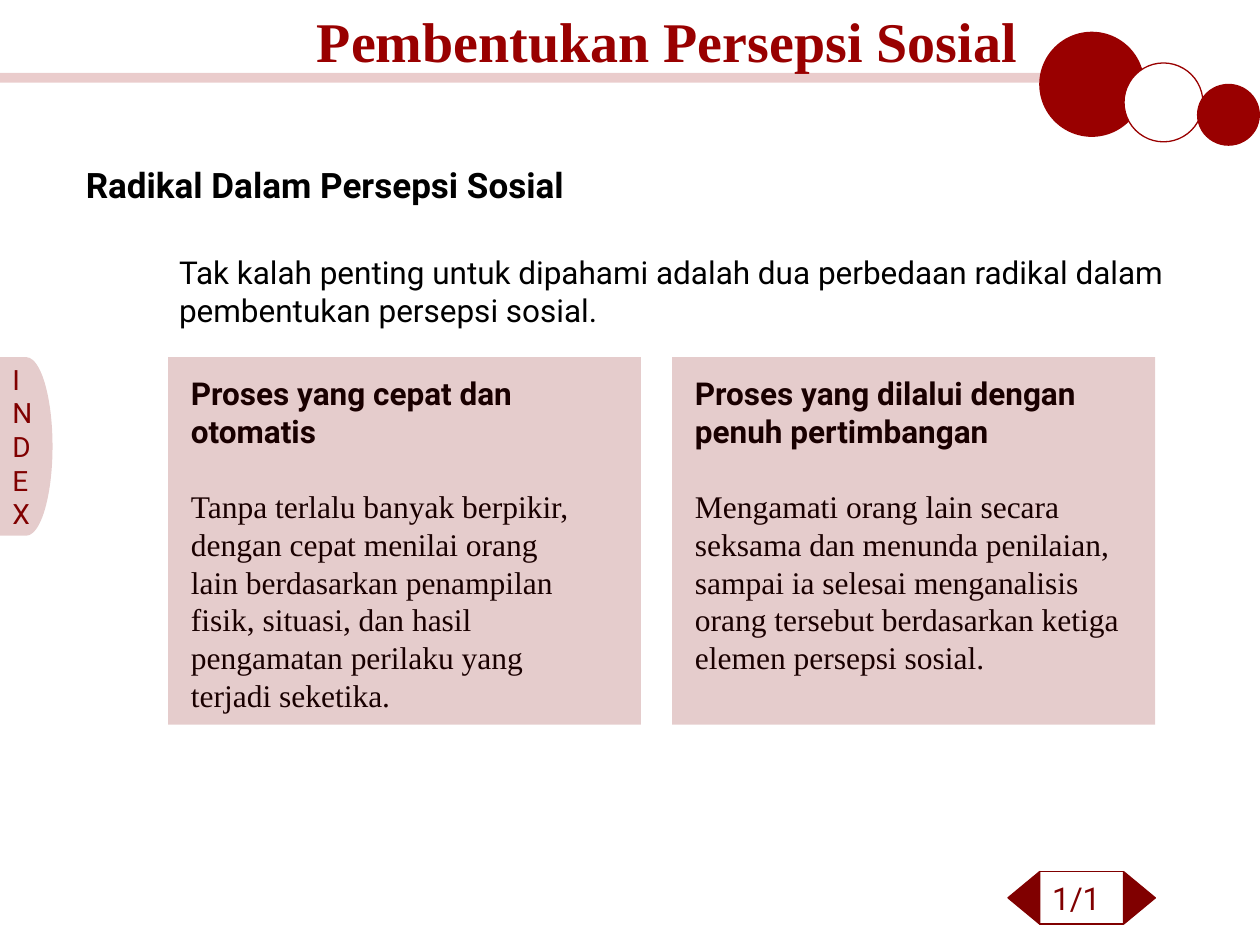
"""Build the slide on the two radical differences in forming social perception."""
from pptx import Presentation
from pptx import util as u
from pptx.dml.color import RGBColor
from pptx.enum import shapes, text
from pptx.oxml.ns import qn
from lxml import etree

RED = RGBColor(0x99, 0x00, 0x00)
MAROON = RGBColor(0x80, 0x00, 0x00)
WHITE = RGBColor(0xFF, 0xFF, 0xFF)
BLACK = RGBColor(0x00, 0x00, 0x00)
SANS, SERIF = "Roboto", "Times New Roman"
KIND = shapes.MSO_SHAPE

deck = Presentation()
deck.slide_width, deck.slide_height = u.Cm(25.4), u.Cm(19.05)
slide = deck.slides.add_slide(deck.slide_layouts[6])


def add_shape(kind, box, fill, line=None, alpha=None):
    shape = slide.shapes.add_shape(kind, *[u.Cm(n) for n in box])
    shape.shadow.inherit = False
    shape.fill.solid()
    shape.fill.fore_color.rgb = fill
    if alpha:
        colour = shape.fill._xPr.find(qn("a:solidFill"))[0]
        etree.SubElement(colour, qn("a:alpha")).set("val", str(alpha * 1000))
    if line is None:
        shape.line.fill.background()
    else:
        shape.line.color.rgb = line
        shape.line.width = u.Pt(0.75)
    return shape


def write(shape, lines, size, colour, font=SANS, bold=False, wrap=True):
    frame = shape.text_frame
    frame.word_wrap = wrap
    for number, line in enumerate(lines):
        paragraph = frame.paragraphs[0] if number == 0 else frame.add_paragraph()
        paragraph.alignment = text.PP_ALIGN.LEFT
        run = paragraph.add_run()
        run.text = line
        run.font.size = u.Pt(size)
        run.font.name = font
        run.font.bold = bold
        run.font.color.rgb = colour
    return frame


add_shape(KIND.RECTANGLE, (0, 1.47, 21.16, 0.2), RED, alpha=20)
for circle, fill, line in [
    ((20.95, 0.64, 2.12, 2.12), RED, None),
    ((22.66, 1.27, 1.59, 1.59), WHITE, RED),
    ((24.13, 1.69, 1.27, 1.25), RED, None),
]:
    add_shape(KIND.OVAL, circle, fill, line)

title = slide.shapes.add_textbox(u.Cm(6.14), u.Cm(0), u.Cm(14.69), u.Cm(1.63))
write(title, ["Pembentukan Persepsi Sosial"], 32, RED, SERIF, True, False)

index = add_shape(KIND.FLOWCHART_DELAY, (0, 7.2, 1.06, 3.6), MAROON, alpha=20)
write(index, "INDEX", 16, MAROON, wrap=False).vertical_anchor = text.MSO_ANCHOR.MIDDLE

heading = slide.shapes.add_textbox(u.Cm(1.48), u.Cm(3.17), u.Cm(16.51), u.Cm(1.09))
write(heading, ["Radikal Dalam Persepsi Sosial"], 20, BLACK, bold=True)

intro = slide.shapes.add_textbox(u.Cm(3.36), u.Cm(4.98), u.Cm(20.57), u.Cm(1.78))
write(intro, ["Tak kalah penting untuk dipahami adalah dua perbedaan radikal dalam "
              "pembentukan persepsi sosial."], 18, BLACK)

for left, width, process, explanation in [
    (3.6, 8.26, "Proses yang cepat dan otomatis",
     "Tanpa terlalu banyak berpikir, dengan cepat menilai orang lain berdasarkan "
     "penampilan fisik, situasi, dan hasil pengamatan perilaku yang terjadi seketika."),
    (13.76, 9.53, "Proses yang dilalui dengan penuh pertimbangan",
     "Mengamati orang lain secara seksama dan menunda penilaian, sampai ia selesai "
     "menganalisis orang tersebut berdasarkan ketiga elemen persepsi sosial."),
]:
    column = slide.shapes.add_textbox(u.Cm(left), u.Cm(7.41), u.Cm(width), u.Cm(6.35))
    body = write(column, [process, explanation], 18, BLACK).paragraphs
    body[0].runs[0].font.bold = True
    body[1].runs[0].font.name = SERIF
    body[1].space_before = u.Pt(21.5)

for left, width in [(3.39, 9.53), (13.55, 9.74)]:
    add_shape(KIND.RECTANGLE, (left, 7.2, width, 7.41), MAROON, alpha=20)

counter = add_shape(KIND.RECTANGLE, (20.96, 17.57, 1.69, 1.06), WHITE, MAROON)
write(counter, ["1/1"], 18, MAROON, wrap=False).vertical_anchor = text.MSO_ANCHOR.MIDDLE

for left, rotation in [(20.32, 0), (22.65, 180)]:
    arrow = add_shape(KIND.LEFT_ARROW, (left, 17.57, 0.64, 1.06), MAROON, MAROON)
    arrow.adjustments[0], arrow.adjustments[1] = 0.69, 1
    arrow.rotation = rotation

deck.save("out.pptx")
